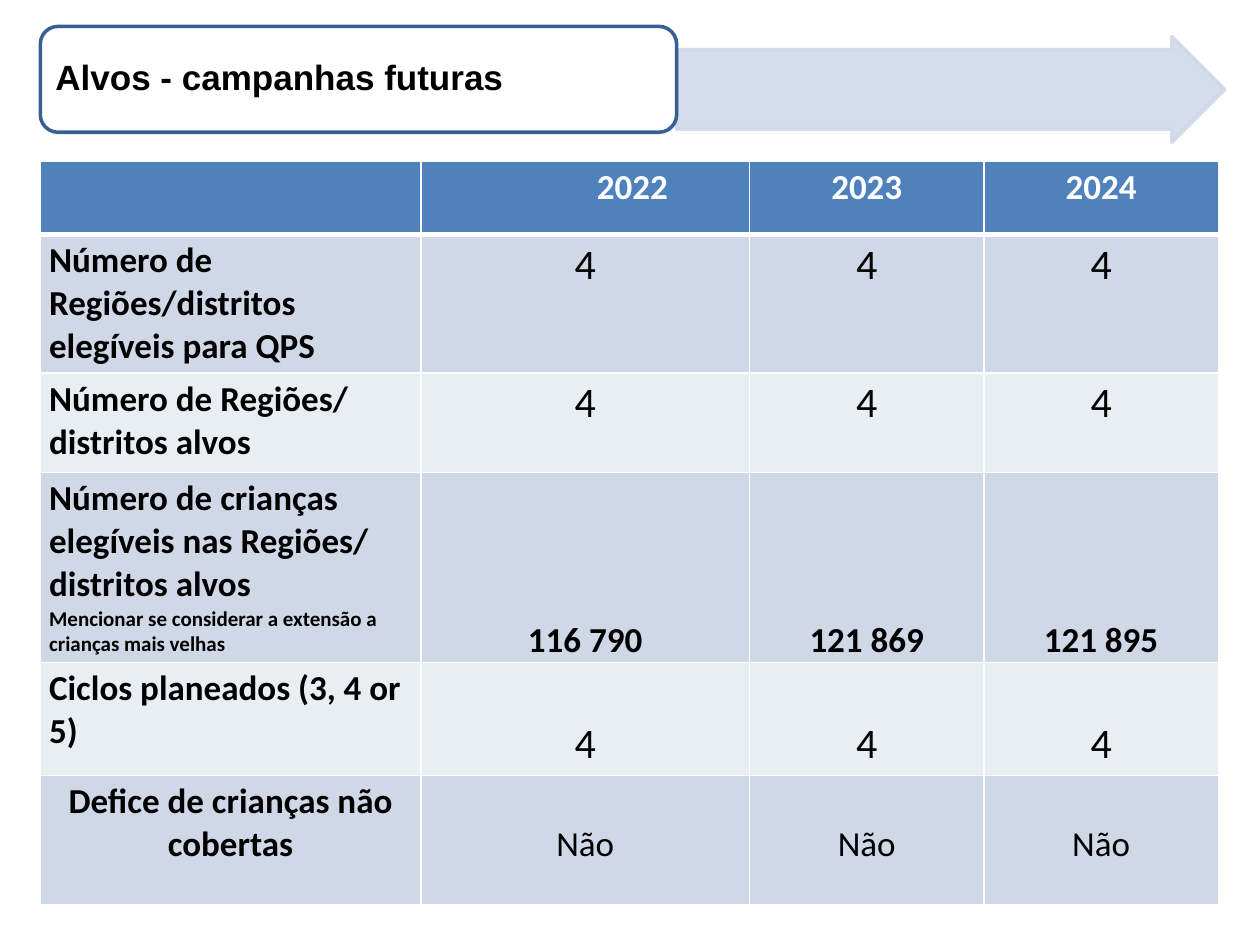
import pptx
import pptx.util
import pptx.dml.color
import pptx.enum.shapes
import pptx.enum.text
import pptx.oxml
import pptx.oxml.ns
import lxml.etree

Inches = pptx.util.Inches
Pt = pptx.util.Pt
ALIGN = pptx.enum.text.PP_ALIGN
ANCHOR = pptx.enum.text.MSO_ANCHOR
SHAPE = pptx.enum.shapes.MSO_SHAPE
NS = pptx.oxml.ns

COLS = [3.02, 2.61, 1.86, 1.86]
ROWS = [0.58, 1.09, 0.79, 1.5, 0.89, 1.03]
HEADS = ["", "2022", "2023", "2024"]
LABELS = [
    "Número de Regiões/distritos elegíveis para QPS",
    "Número de Regiões/ distritos alvos",
    "Número de crianças elegíveis nas Regiões/ distritos alvos",
    "Ciclos planeados (3, 4 or 5)",
    "Defice de crianças não cobertas",
]
NOTE = "Mencionar se considerar a extensão a crianças mais velhas"
VALUES = [["4"] * 3, ["4"] * 3, ["116 790", "121 869", "121 895"],
          ["4"] * 3, ["Não"] * 3]
STYLES = [
    dict(size=24),
    dict(size=24),
    dict(bold=True, anchor=ANCHOR.BOTTOM, pad=(0.01, 0.01, 0.01, 0)),
    dict(size=24, pad=(0.07, 0.45, 0.07, 0.04)),
    dict(pad=(0.07, 0.38, 0.07, 0.04)),
]


def paint(form, color):
    """Give a fill or line format a solid hex colour."""
    form.solid()
    form.fore_color.rgb = pptx.dml.color.RGBColor.from_string(color)


def write(par, text, size=20, bold=False, color="000000", font="Calibri",
          align=ALIGN.LEFT):
    """Put one formatted run in a paragraph."""
    par.alignment = align
    run = par.add_run()
    run.text = text
    run.font.size, run.font.bold, run.font.name = Pt(size), bold, font
    paint(run.font.fill, color)


def fill_cell(cell, text, fill, head=False, anchor=ANCHOR.TOP,
              pad=(0.07, 0.04, 0.07, 0.04), **form):
    """Set the text, insets, white borders and fill of a cell."""
    cell.vertical_anchor = anchor
    (cell.margin_left, cell.margin_top,
     cell.margin_right, cell.margin_bottom) = map(Inches, pad)
    if text:
        write(cell.text_frame.paragraphs[0], text, **form)
    props = cell._tc.get_or_add_tcPr()
    for side in "LRTB":
        width = Pt(3 if head and side == "B" else 1)
        props.append(pptx.oxml.parse_xml(
            f'<a:ln{side} {NS.nsdecls("a")} w="{width}"><a:solidFill>'
            f'<a:srgbClr val="FFFFFF"/></a:solidFill></a:ln{side}>'))
    paint(cell.fill, fill)


def add_form(slide, kind, box, fill, line):
    """Add a flat preset shape with a 2 pt outline."""
    form = slide.shapes.add_shape(kind, *map(Inches, box))
    form.shadow.inherit = False
    paint(form.fill, fill)
    paint(form.line.fill, line)
    form.line.width = Pt(2)
    return form


def add_head(slide, left, top, width, height):
    """Draw the arrow, the rounded frame and the slide title."""
    frame = 5.05
    arrow = add_form(slide, SHAPE.RIGHT_ARROW,
                     (left + frame, top + 0.08, width - frame, height),
                     "D0D8E8", "D0D8E8")
    arrow.adjustments[0] = 0.75
    for tint in arrow._element.spPr.iter(NS.qn("a:srgbClr")):
        lxml.etree.SubElement(tint, NS.qn("a:alpha"), val="90000")
    add_form(slide, SHAPE.ROUNDED_RECTANGLE, (left, top, frame, height),
             "FFFFFF", "376092")
    title = slide.shapes.title
    slide.shapes._spTree.append(title._element)
    title.left, title.top = Inches(left + 0.04), Inches(top + 0.04)
    title.width, title.height = Inches(frame - 0.08), Inches(height - 0.08)
    text = title.text_frame
    text.word_wrap = True
    text.auto_size = pptx.enum.text.MSO_AUTO_SIZE.NONE
    text.vertical_anchor = ANCHOR.MIDDLE
    text.margin_left = text.margin_right = Inches(0.08)
    text.margin_top = text.margin_bottom = Inches(0.04)
    text.paragraphs[0].line_spacing = 0.9
    write(text.paragraphs[0], "Alvos - campanhas futuras", bold=True,
          font="Arial")


def add_grid(slide, left, top):
    """Build the table of yearly targets."""
    box = map(Inches, (left, top, sum(COLS), sum(ROWS)))
    grid = slide.shapes.add_table(len(ROWS), len(COLS), *box).table
    for col, width in zip(grid.columns, COLS):
        col.width = Inches(width)
    for row, height in zip(grid.rows, ROWS):
        row.height = Inches(height)
    for c, year in enumerate(HEADS):
        pad = (0.82 if c == 1 else 0.07, 0.04, 0.07, 0.04)
        fill_cell(grid.cell(0, c), year, "4F81BD", head=True, pad=pad,
                  bold=True, color="FFFFFF", align=ALIGN.CENTER)
    for r, (label, values, style) in enumerate(zip(LABELS, VALUES, STYLES), 1):
        fill = "D0D8E8" if r % 2 else "E9EDF4"
        align = ALIGN.CENTER if r == len(LABELS) else ALIGN.LEFT
        fill_cell(grid.cell(r, 0), label, fill, bold=True, align=align)
        for c, value in enumerate(values, 1):
            fill_cell(grid.cell(r, c), value, fill, align=ALIGN.CENTER, **style)
    write(grid.cell(3, 0).text_frame.add_paragraph(), NOTE, size=12, bold=True)


def main():
    """Build and save the slide."""
    deck = pptx.Presentation()
    deck.slide_width, deck.slide_height = Inches(10), Inches(7.5)
    slide = deck.slides.add_slide(deck.slide_layouts[5])
    add_grid(slide, 0.32, 1.28)
    add_head(slide, 0.32, 0.21, 9.4, 0.84)
    deck.save("out.pptx")


if __name__ == "__main__":
    main()
